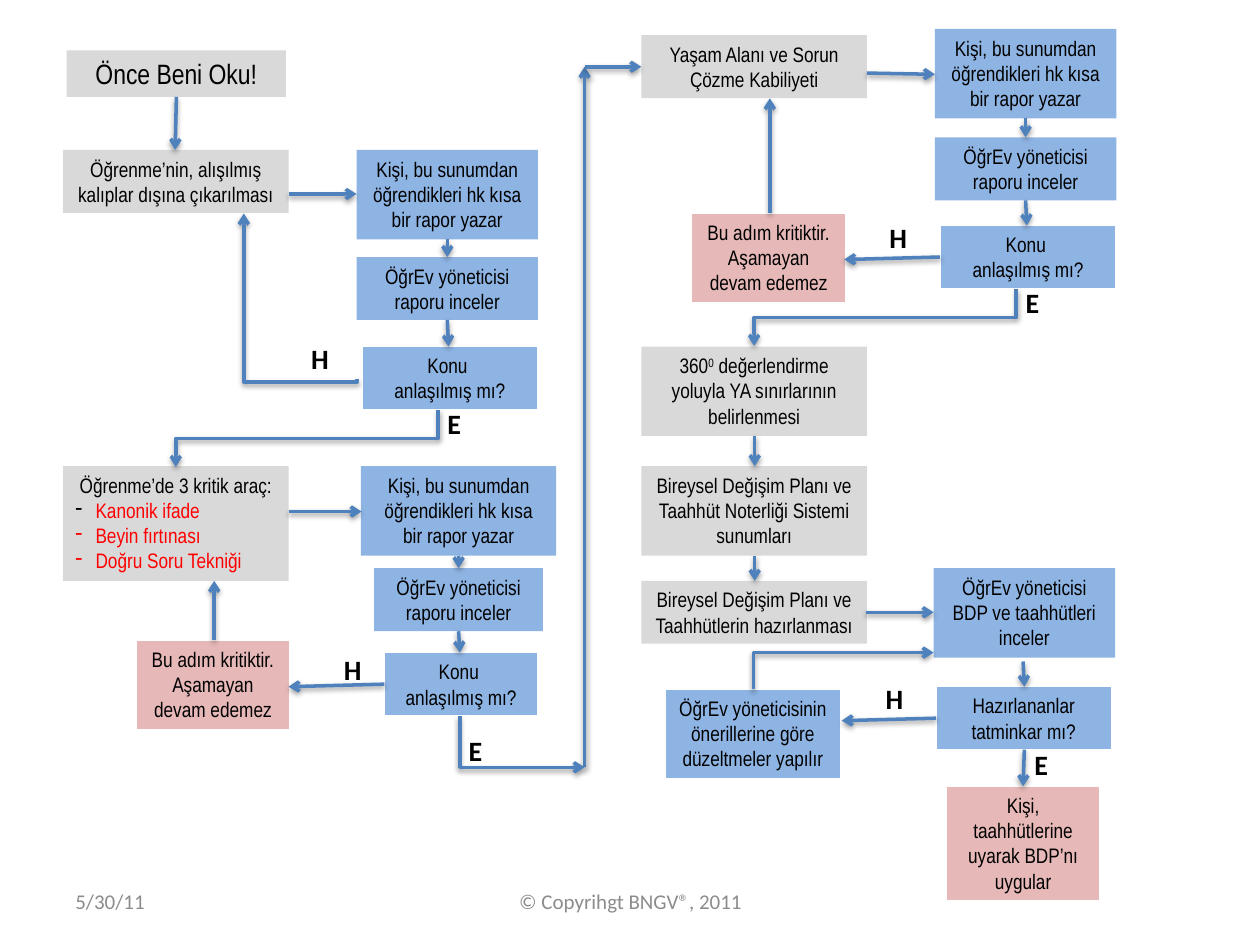
from lxml import etree
from pptx import Presentation
from pptx.dml.color import RGBColor
from pptx.enum import shapes, text
from pptx.oxml.ns import qn
from pptx.util import Inches, Pt

BLACK, WHITE = RGBColor(0, 0, 0), RGBColor(255, 255, 255)
RED, FOOTER_GRAY = RGBColor(255, 0, 0), RGBColor(0x8C, 0x8C, 0x8C)
GRAY, BLUE = RGBColor(0xD9, 0xD9, 0xD9), RGBColor(0x8E, 0xB4, 0xE3)
PINK, ARROW_BLUE = RGBColor(0xE6, 0xB9, 0xB8), RGBColor(0x4F, 0x81, 0xBD)

HEIGHTS = {1: 0.37, 2: 0.5, 3: 0.71, 4: 0.91}  # box height by text lines
STEP_WIDTH = 1.79
REPORT = "Kişi, bu sunumdan öğrendikleri hk kısa bir rapor yazar"
MANAGER = "ÖğrEv yöneticisi raporu inceler"
QUESTION = "Konu \nanlaşılmış mı?"
CRITICAL = "Bu adım kritiktir.\nAşamayan devam edemez"

# Learning steps: left, top, lines, text (^ marks superscript, "- " a bullet)
STEPS = [
    (0.5, 1.19, 2, "Öğrenme’nin, alışılmış kalıplar dışına çıkarılması"),
    (0.5, 3.7, 4, "Öğrenme’de 3 kritik araç:\n- Kanonik ifade\n- Beyin fırtınası\n- Doğru Soru Tekniği"),
    (5.09, 0.28, 2, "Yaşam Alanı ve Sorun Çözme Kabiliyeti"),
    (5.09, 2.75, 3, "360^0^ değerlendirme yoluyla YA sınırlarının belirlenmesi"),
    (5.09, 3.7, 3, "Bireysel Değişim Planı ve Taahhüt Noterliği Sistemi sunumları"),
    (5.09, 4.61, 2, "Bireysel Değişim Planı ve Taahhütlerin hazırlanması"),
]
# Review columns: axis, tops and widths of report, manager and question boxes
REVIEWS = [
    (3.55, (1.19, 2.04, 2.75), (1.44, 1.44, 1.39)),
    (3.64, (3.7, 4.51, 5.18), (1.55, 1.34, 1.22)),
    (8.14, (0.23, 1.09, 1.79), (1.44, 1.44, 1.39)),
]
# Other boxes: left, top, width, lines, fill, outlined, text
OUTCOMES = [
    (1.08, 5.08, 1.22, 3, PINK, True, CRITICAL),
    (5.49, 1.69, 1.22, 3, PINK, True, CRITICAL),
    (7.41, 4.51, 1.44, 3, BLUE, False, "ÖğrEv yöneticisi BDP ve taahhütleri inceler"),
    (7.43, 5.45, 1.39, 2, BLUE, True, "Hazırlananlar tatminkar mı?"),
    (5.28, 5.47, 1.39, 3, BLUE, True, "ÖğrEv yöneticisinin önerillerine göre düzeltmeler yapılır"),
    (7.51, 6.24, 1.22, 4, PINK, True, "Kişi, taahhütlerine uyarak BDP’nı uygular"),
]
ANSWERS = {
    "E": [(3.55, 3.23), (3.72, 5.82), (8.14, 2.27), (8.21, 5.93)],
    "H": [(2.47, 2.71), (2.73, 5.18), (7.06, 1.75), (7.03, 5.41)],
}
ARROWS = [
    (1.4, 0.77, 1.39, 1.19), (2.29, 1.54, 2.83, 1.54), (2.29, 4.06, 2.87, 4.06),
    (3.05, 5.43, 2.29, 5.45), (1.7, 5.08, 1.7, 4.61), (4.64, 6.09, 4.64, 0.53),
    (4.64, 0.53, 5.09, 0.53), (6.88, 0.58, 7.42, 0.59), (7.46, 2.04, 6.7, 2.06),
    (6.11, 1.69, 6.11, 0.78), (5.99, 3.46, 5.99, 3.7), (5.99, 4.41, 5.99, 4.61),
    (6.87, 4.86, 7.41, 4.86), (8.12, 5.25, 8.13, 5.45), (7.43, 5.7, 6.68, 5.72),
    (8.13, 5.95, 8.12, 6.24),
]
# Elbows: left, top, width, height, rotation, flips, preset, bend in percent
ELBOWS = [
    (1.73, 1.9, 1.31, 0.9, 270, ["flipV"], "bentConnector3", -2),
    (2.21, 2.44, 0.45, 2.08, 90, [], "bentConnector3", 50),
    (6.8, 1.48, 0.45, 2.08, 90, [], "bentConnector3", 50),
    (3.94, 5.39, 0.41, 0.99, 270, ["flipH"], "bentConnector2", None),
    (6.55, 4.61, 0.29, 1.43, 90, ["flipH", "flipV"], "bentConnector2", None),
]

presentation = Presentation()
presentation.slide_width, presentation.slide_height = Inches(10), Inches(7.5)
slide = presentation.slides.add_slide(presentation.slide_layouts[6])


def add_child(parent, tag, **attributes):
    return etree.SubElement(parent, qn(tag), {k: str(v) for k, v in attributes.items()})


def write(shape, content, font="Arial Narrow", size=12, color=BLACK, bold=False,
          align=text.PP_ALIGN.CENTER, anchor=text.MSO_ANCHOR.TOP, wrap=True):
    frame = shape.text_frame
    frame.word_wrap, frame.vertical_anchor = wrap, anchor
    bullets = 0
    for index, line in enumerate(content.split("\n")):
        paragraph = frame.paragraphs[0] if index == 0 else frame.add_paragraph()
        paragraph.alignment = align
        run_color = color
        if line.startswith("- "):
            line, run_color = line[2:], RED
            paragraph.alignment = text.PP_ALIGN.LEFT
            properties = paragraph._p.get_or_add_pPr()
            properties.set("marL", str(Inches(0.16)))
            properties.set("indent", str(-Inches(0.16)))
            bullet_color = add_child(properties, "a:buClr")
            add_child(bullet_color, "a:srgbClr", val=RED if bullets else BLACK)
            add_child(properties, "a:buChar", char="-")
            bullets += 1
        for part, piece in enumerate(line.split("^")):
            run = paragraph.add_run()
            run.text = piece
            run.font.name, run.font.size, run.font.bold = font, Pt(size), bold
            run.font.color.rgb = run_color
            if part % 2:
                run.font._element.set("baseline", "30000")


def add_box(left, top, width, lines, fill, outlined, content, size=12):
    shape = slide.shapes.add_shape(shapes.MSO_SHAPE.RECTANGLE, Inches(left), Inches(top),
                                   Inches(width), Inches(HEIGHTS[lines]))
    shape.shadow.inherit = False
    shape.fill.solid()
    shape.fill.fore_color.rgb = fill
    if outlined:
        shape.line.color.rgb, shape.line.width = WHITE, Pt(0.75)
    else:
        shape.line.fill.background()
    write(shape, content, size=size)


def add_text(left, top, width, height, content, inset=True, **style):
    box = slide.shapes.add_textbox(Inches(left), Inches(top), Inches(width), Inches(height))
    if not inset:
        frame = box.text_frame
        frame.margin_left = frame.margin_right = frame.margin_top = frame.margin_bottom = 0
    write(box, content, **style)


def add_arrow(x1, y1, x2, y2, kind=shapes.MSO_CONNECTOR.STRAIGHT):
    arrow = slide.shapes.add_connector(kind, Inches(x1), Inches(y1), Inches(x2), Inches(y2))
    arrow.line.color.rgb, arrow.line.width = ARROW_BLUE, Pt(2)
    add_child(arrow.line._get_or_add_ln(), "a:tailEnd", type="arrow")
    effects = add_child(arrow._element.spPr, "a:effectLst")
    shadow = add_child(effects, "a:outerShdw", blurRad=Pt(3.1), dist=Pt(1.6),
                       dir=90 * 60000, rotWithShape=0)
    add_child(add_child(shadow, "a:srgbClr", val=BLACK), "a:alpha", val=38000)
    return arrow


def add_elbow(left, top, width, height, rotation, flips, preset, bend):
    elbow = add_arrow(left, top, left + width, top + height, shapes.MSO_CONNECTOR.ELBOW)
    properties = elbow._element.spPr
    transform = properties.find(qn("a:xfrm"))
    transform.set("rot", str(rotation * 60000))
    for flip in flips:
        transform.set(flip, "1")
    geometry = properties.find(qn("a:prstGeom"))
    geometry.set("prst", preset)
    if bend is not None:
        adjustments = geometry.find(qn("a:avLst"))
        add_child(adjustments, "a:gd", name="adj1", fmla=f"val {bend * 1000}")


# Footer
footer = dict(font="Calibri", color=FOOTER_GRAY, anchor=text.MSO_ANCHOR.MIDDLE)
add_text(0.5, 6.95, 2.33, 0.4, "5/30/11", align=text.PP_ALIGN.LEFT, **footer)
add_text(3.42, 6.95, 3.17, 0.4, "© Copyrihgt BNGV®, 2011", **footer)

# Start, steps and outcomes
add_box(0.53, 0.4, 1.74, 1, GRAY, False, "Önce Beni Oku!", size=16)
for left, top, lines, content in STEPS:
    add_box(left, top, STEP_WIDTH, lines, GRAY, False, content)
for outcome in OUTCOMES:
    add_box(*outcome)

# Review columns with the arrows between their boxes
for axis, tops, widths in REVIEWS:
    for top, width, lines, content in zip(tops, widths, (3, 2, 2), (REPORT, MANAGER, QUESTION)):
        nudge = 0.02 if content == QUESTION else 0
        add_box(axis + nudge - width / 2, top, width, lines, BLUE, content == QUESTION, content)
    add_arrow(axis, tops[0] + HEIGHTS[3], axis, tops[1])
    add_arrow(axis, tops[1] + HEIGHTS[2], axis + 0.01, tops[2])

# Remaining arrows and the yes/no answers
for ends in ARROWS:
    add_arrow(*ends)
for elbow_data in ELBOWS:
    add_elbow(*elbow_data)
for answer, places in ANSWERS.items():
    for left, top in places:
        add_text(left, top, 0.14 if answer == "H" else 0.11, 0.27, answer, inset=False,
                 font="Calibri", size=16, bold=True, align=text.PP_ALIGN.LEFT, wrap=False)

presentation.save("out.pptx")
